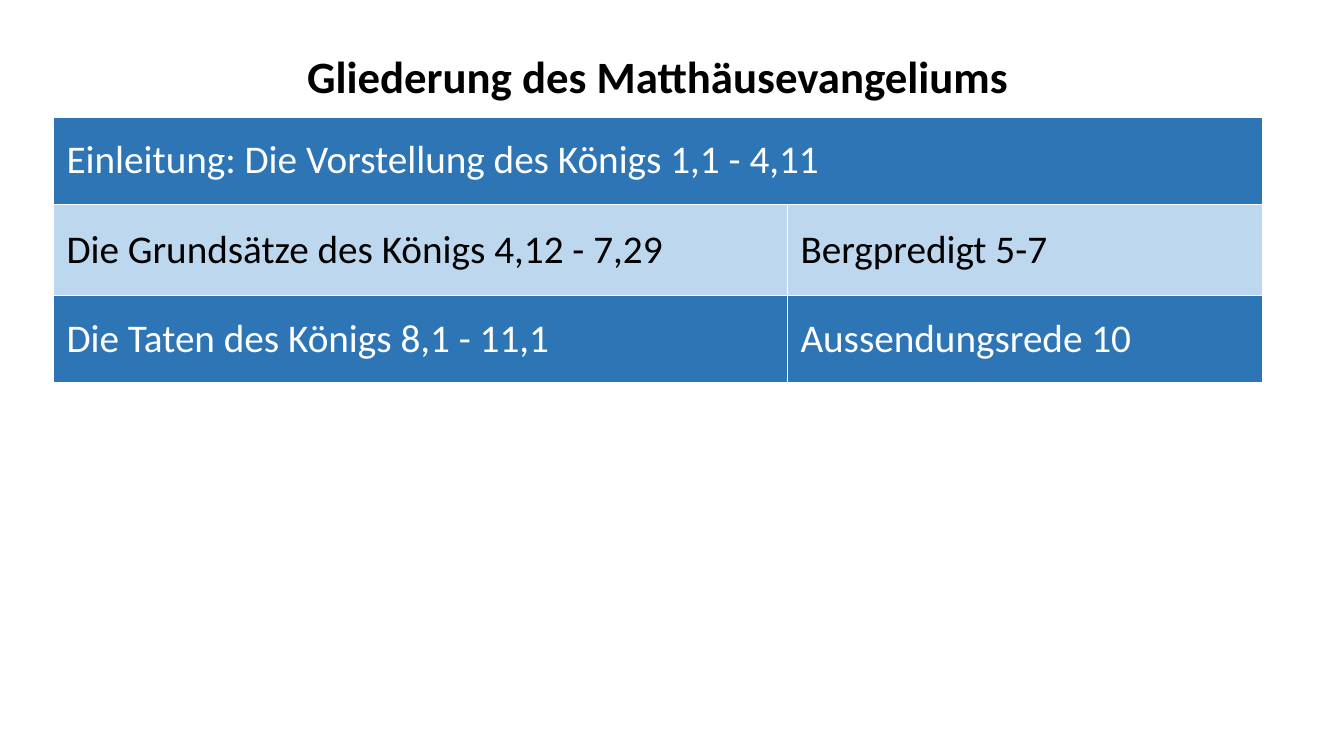
from dataclasses import dataclass

from lxml.etree import SubElement
from pptx import Presentation
from pptx.dml.color import RGBColor
from pptx.enum.text import MSO_ANCHOR as Anchor, PP_ALIGN as Align
from pptx.oxml.ns import qn
from pptx.table import _Cell as Cell
from pptx.util import Inches, Pt

COLUMNS = (7.28, 4.71)
ROWS = (0.74, 0.88, 0.9, 0.87)
LEFT, TOP = 0.53, 0.41
WHITE, BLACK, DARK, LIGHT = "FFFFFF", "000000", "2E75B6", "BDD7EE"


@dataclass
class Row:
    """One table row; a single text spans all columns."""
    texts: tuple[str, ...]
    fill: str
    ink: str
    size: int = 28
    heading: bool = False


OUTLINE = (
    Row(("Gliederung des Matthäusevangeliums",), WHITE, BLACK, 32, True),
    Row(("Einleitung: Die Vorstellung des Königs 1,1 - 4,11",), DARK, WHITE),
    Row(("Die Grundsätze des Königs 4,12 - 7,29", "Bergpredigt 5-7"), LIGHT, BLACK),
    Row(("Die Taten des Königs 8,1 - 11,1", "Aussendungsrede 10"), DARK, WHITE),
)


def color(value: str) -> RGBColor:
    return RGBColor.from_string(value)


def add_borders(cell: Cell, bottom: int) -> None:
    """Draw white cell borders; they must precede the fill in the XML."""
    properties = cell._tc.get_or_add_tcPr()
    for side, width in (("L", 1), ("R", 1), ("T", 1), ("B", bottom)):
        line = SubElement(properties, qn(f"a:ln{side}"), w=str(Pt(width)))
        solid = SubElement(line, qn("a:solidFill"))
        SubElement(solid, qn("a:srgbClr"), val=WHITE)


def style_cell(cell: Cell, row: Row) -> None:
    add_borders(cell, 3 if row.heading else 1)
    cell.fill.solid()
    cell.fill.fore_color.rgb = color(row.fill)
    cell.vertical_anchor = Anchor.MIDDLE
    cell.margin_left = cell.margin_right = Inches(0.13)
    cell.margin_top = cell.margin_bottom = 0


def write_text(cell: Cell, text: str, row: Row) -> None:
    para = cell.text_frame.paragraphs[0]
    para.alignment = Align.CENTER if row.heading else Align.LEFT
    span = para.add_run()
    span.text = text
    span.font.name = "Calibri"
    span.font.size = Pt(row.size)
    span.font.bold = row.heading
    span.font.color.rgb = color(row.ink)


def main() -> None:
    deck = Presentation()
    deck.slide_width, deck.slide_height = Inches(13.33), Inches(7.5)
    page = deck.slides.add_slide(deck.slide_layouts[6])

    # Table grid
    table = page.shapes.add_table(
        len(ROWS), len(COLUMNS), Inches(LEFT), Inches(TOP),
        Inches(sum(COLUMNS)), Inches(sum(ROWS))).table
    for column, width in zip(table.columns, COLUMNS):
        column.width = Inches(width)
    for line, height in zip(table.rows, ROWS):
        line.height = Inches(height)

    # Outline of the gospel
    for index, row in enumerate(OUTLINE):
        cells = [table.cell(index, position) for position in range(len(COLUMNS))]
        for cell in cells:
            style_cell(cell, row)
        if len(row.texts) == 1:
            cells[0].merge(cells[-1])
        for cell, text in zip(cells, row.texts):
            write_text(cell, text, row)

    deck.save("out.pptx")


if __name__ == "__main__":
    main()
